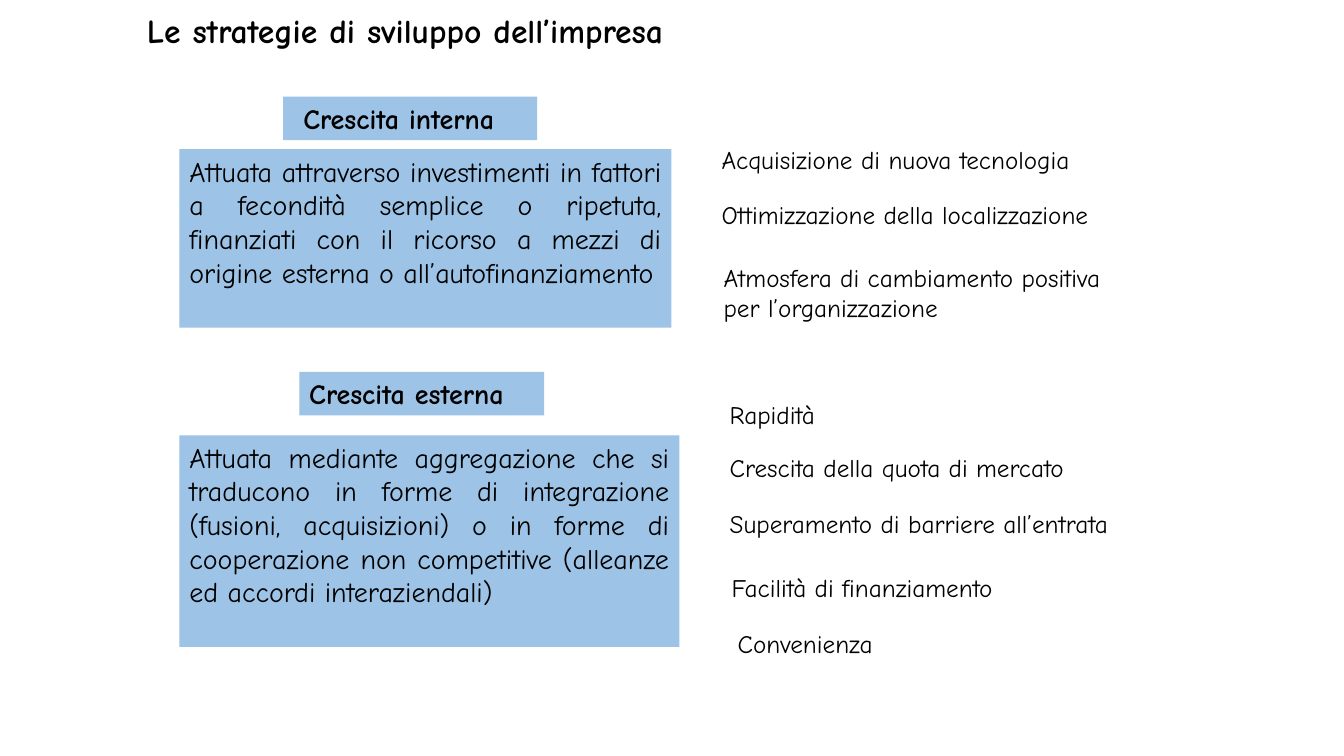
from pptx import Presentation
from pptx.dml.color import RGBColor
from pptx.enum import shapes, text
from pptx.util import Pt

BLACK = RGBColor(0x00, 0x00, 0x00)
LIGHT_BLUE = RGBColor(0x9D, 0xC3, 0xE6)
FONT = "Comic Neue"
INSET = 7.2
LINE_HEIGHT = 21.6

TITLE = ("Le strategie di sviluppo dell’impresa", (97.9, 3.6, 622.8, 36))

STRATEGIES = [
    {
        "heading": ("Crescita interna", (202.3, 69.1, 181.4, 31), 14.4),
        "definition": (
            "Attuata attraverso investimenti in fattori a fecondità semplice o "
            "ripetuta, finanziati con il ricorso a mezzi di origine esterna o "
            "all’autofinanziamento",
            (128.2, 106.6, 351.4, 127.4),
        ),
        "benefits": [
            ("Acquisizione di nuova tecnologia", 508.3, 99.4, 283.7, 1),
            ("Ottimizzazione della localizzazione", 508.3, 139, 306.7, 1),
            ("Atmosfera di cambiamento positiva per l’organizzazione",
             509.8, 183.6, 295.2, 2),
        ],
    },
    {
        "heading": ("Crescita esterna", (213.8, 265.7, 175, 31), INSET),
        "definition": (
            "Attuata mediante aggregazione che si traducono in forme di "
            "integrazione (fusioni, acquisizioni) o in forme di cooperazione "
            "non competitive (alleanze ed accordi interaziendali)",
            (128.2, 311, 357.1, 151.2),
        ),
        "benefits": [
            ("Rapidità", 514.1, 281.5, 266.4, 1),
            ("Crescita della quota di mercato", 514.1, 319.7, 331.9, 1),
            ("Superamento di barriere all’entrata", 514.1, 359.3, 331.9, 1),
            ("Facilità di finanziamento", 515.5, 405.4, 288, 1),
            ("Convenienza", 519.8, 445, 288, 1),
        ],
    },
]

deck = Presentation()
deck.slide_width, deck.slide_height = Pt(960), Pt(540)
slide = deck.slides.add_slide(deck.slide_layouts[6])


def write(holder, wording, size, bold=False, justified=False, inset=INSET):
    frame = holder.text_frame
    frame.text = wording
    frame.word_wrap = True
    frame.vertical_anchor = text.MSO_ANCHOR.TOP
    frame.margin_left = Pt(inset)
    paragraph = frame.paragraphs[0]
    paragraph.alignment = (
        text.PP_ALIGN.JUSTIFY if justified else text.PP_ALIGN.LEFT
    )
    font = paragraph.runs[0].font
    font.name, font.size, font.bold = FONT, Pt(size), bold
    font.color.rgb = BLACK


def add_label(box, wording, size, **style):
    label = slide.shapes.add_textbox(*map(Pt, box))
    write(label, wording, size, **style)


def add_panel(box, wording, **style):
    panel = slide.shapes.add_shape(shapes.MSO_SHAPE.RECTANGLE, *map(Pt, box))
    panel.shadow.inherit = False
    panel.fill.solid()
    panel.fill.fore_color.rgb = LIGHT_BLUE
    panel.line.fill.background()
    write(panel, wording, 20, **style)


title, title_box = TITLE
add_label(title_box, title, 24, bold=True, justified=True)

for strategy in STRATEGIES:
    heading, heading_box, heading_inset = strategy["heading"]
    add_panel(heading_box, heading, bold=True, inset=heading_inset)
    definition, definition_box = strategy["definition"]
    add_panel(definition_box, definition, justified=True)
    for benefit, left, top, width, lines in strategy["benefits"]:
        height = lines * LINE_HEIGHT + INSET
        add_label((left, top, width, height), benefit, 18)

deck.save("out.pptx")
